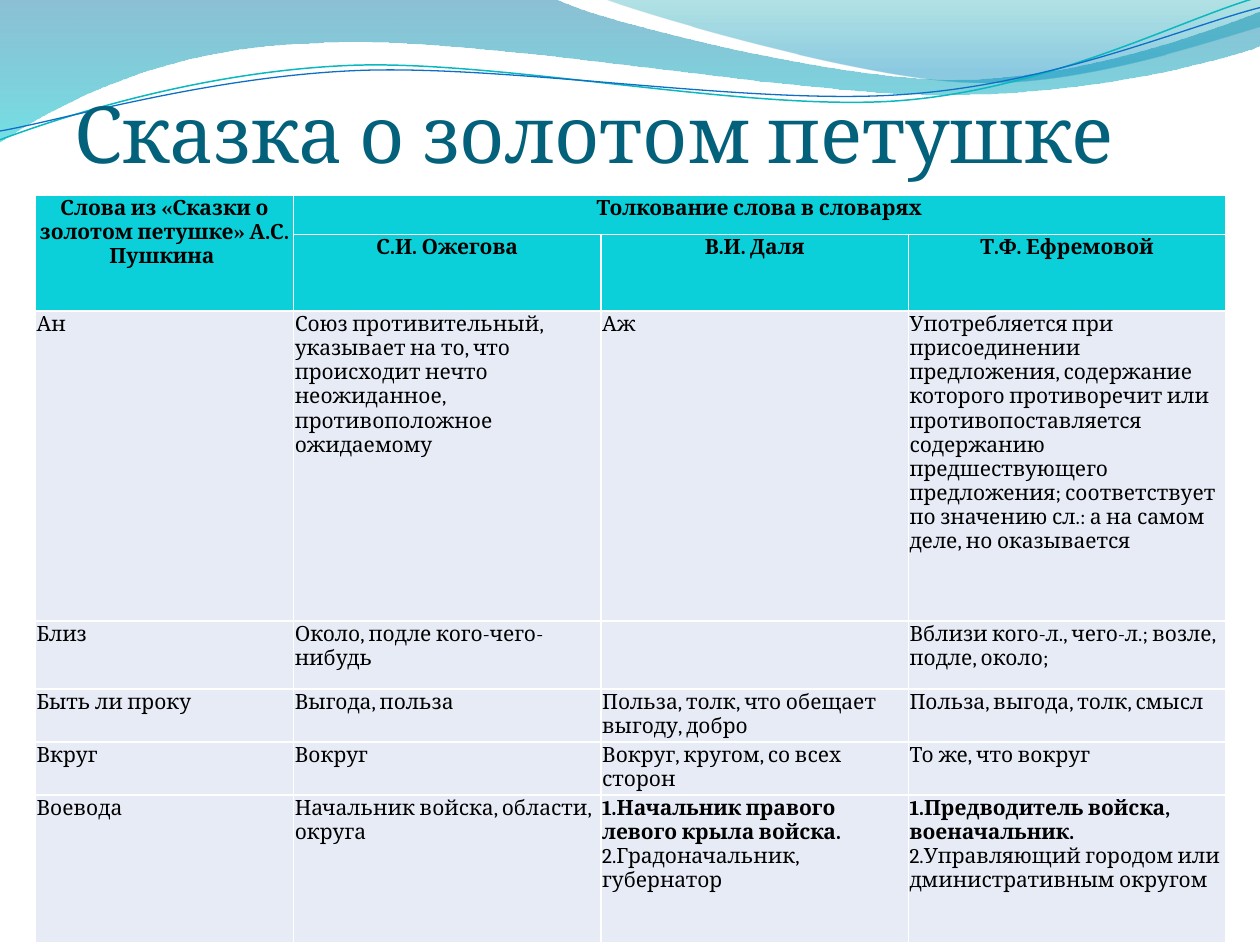
from math import cos, radians, sin

from lxml import etree
from pptx import Presentation
from pptx.dml.color import RGBColor
from pptx.enum.text import MSO_ANCHOR, PP_ALIGN
from pptx.oxml.ns import qn
from pptx.util import Inches, Pt

CENTER, LEFT = PP_ALIGN.CENTER, PP_ALIGN.LEFT
BOTTOM = MSO_ANCHOR.BOTTOM
FONT = "Cambria"
COLORS = {
    "title": "04617B", "text": "000000", "header": "0BD0D9", "body": "E7EBF5",
    "border": "FFFFFF", "teal": "0AB8BF", "blue": "0F6FC6",
}

TITLE = "Сказка о золотом петушке"
HEADERS = [
    ["Слова из «Сказки о золотом петушке» А.С. Пушкина ", "Толкование слова в словарях", "", ""],
    ["", "С.И. Ожегова", "В.И. Даля", "Т.Ф. Ефремовой"],
]
# A tuple holds a bold part followed by a regular part.
ENTRIES = [
    ["Ан",
     "Союз противительный, указывает на то, что происходит нечто неожиданное, "
     "противоположное ожидаемому",
     "Аж",
     "Употребляется при присоединении предложения, содержание которого противоречит или "
     "противопоставляется содержанию предшествующего предложения; соответствует по "
     "значению сл.: а на самом деле, но оказывается"],
    ["Близ", "Около, подле кого-чего-нибудь", "",
     "Вблизи кого-л., чего-л.; возле, подле, около;"],
    ["Быть ли проку", "Выгода, польза", "Польза, толк, что обещает выгоду, добро",
     "Польза, выгода, толк, смысл"],
    ["Вкруг", "Вокруг", "Вокруг, кругом, со всех сторон", "То же, что вокруг"],
    ["Воевода", "Начальник войска, области, округа",
     ("1.Начальник правого левого крыла войска. ", "2.Градоначальник, губернатор"),
     ("1.Предводитель войска, военачальник. ",
      "2.Управляющий городом или дминистративным округом")],
]
COLUMN_WIDTHS = [2.05, 2.44, 2.44, 2.52]
ROW_HEIGHTS = [0.31, 0.47, 2.46, 0.54, 0.42, 0.42, 1.17]

# Frame (left, top, width, height), then the outline in slide inches: a start point,
# lines (2 numbers) and Bezier curves (6 numbers).
# Gradient stops: position, colour, opacity in percent.
WAVES = [
    ((-0.01, -0.01, 10.02, 1.14),
     [(0, 0), (4.4, -0.01), (4.76, 0.17, 6.64, 0.63, 7.58, 0.63),
      (8.53, 0.63, 9.58, 0.26, 10, 0.09), (10.01, 0.36),
      (9.83, 0.44, 8.7, 0.76, 7.46, 0.75), (6.22, 0.75, 3.82, 0.28, 2.57, 0.34),
      (1.29, 0.36, 0.46, 0.83, -0.01, 1.13), (0, 0)],
     [(0, "0074A1", 45), (1, "00C6CF", 55)]),
    ((4.79, -0.01, 5.21, 0.7),
     [(4.79, -0.01), (5.09, 0.11, 6.82, 0.62, 7.69, 0.65),
      (8.56, 0.69, 9.61, 0.32, 10, 0.21), (10, 0), (4.79, -0.01)],
     [(0, "00A1A9", 30), (0.8, "008BBF", 45)]),
]
CURVES = [
    ((-0.02, 0.22, 10.02, 0.71),
     [(0, 1.11), (0.48, 0.93, 1.58, 0.57, 2.77, 0.52), (3.95, 0.47, 5.93, 0.89, 7.13, 0.8),
      (8.33, 0.71, 9.38, 0.15, 9.98, -0.02)], "teal", 0.85),
    ((-0.02, 0.3, 10.03, 0.58),
     [(0, 1.04), (0.47, 0.96, 1.64, 0.61, 2.83, 0.56), (4.03, 0.51, 5.97, 0.84, 7.17, 0.75),
      (8.36, 0.67, 9.41, 0.21, 10, 0.06)], "blue", 0.75),
]
CURVE_ROTATION = -2.7


def rgb(name):
    return RGBColor.from_string(COLORS[name])


def to_frame(x, y, frame, rotation):
    """Turn a slide point back by the rotation and measure it from the frame's corner."""
    left, top, width, height = frame
    dx, dy = x - left - width / 2, y - top - height / 2
    angle = radians(-rotation)
    return (width / 2 + dx * cos(angle) - dy * sin(angle),
            height / 2 + dx * sin(angle) + dy * cos(angle))


def add_outline(slide, frame, outline, rotation=0, close=False):
    """Add a freeform whose segments may be Bezier curves."""
    ends = [(Inches(segment[-2]), Inches(segment[-1])) for segment in outline]
    builder = slide.shapes.build_freeform(*ends[0])
    builder.add_line_segments(ends[1:], close=close)
    shape = builder.convert_to_shape()
    shape.shadow.inherit = False
    shape.left, shape.top, shape.width, shape.height = map(Inches, frame)
    shape.rotation = rotation

    route = shape.element.spPr.find(".//" + qn("a:path"))
    route.set("w", str(shape.width))
    route.set("h", str(shape.height))
    for old_segment, segment in zip(list(route), outline):
        tag = "a:cubicBezTo" if len(segment) == 6 else old_segment.tag
        new_segment = etree.Element(qn(tag) if tag.startswith("a:") else tag)
        for x, y in zip(segment[::2], segment[1::2]):
            local_x, local_y = to_frame(x, y, frame, rotation)
            etree.SubElement(new_segment, qn("a:pt"),
                             x=str(Inches(local_x)), y=str(Inches(local_y)))
        route.replace(old_segment, new_segment)
    return shape


def add_wave(slide, frame, outline, stops):
    shape = add_outline(slide, frame, outline, close=True)
    shape.line.fill.background()
    shape.fill.gradient()
    shape.fill.gradient_angle = 270
    for stop, (position, color, _) in zip(shape.fill.gradient_stops, stops):
        stop.position = position
        stop.color.rgb = RGBColor.from_string(color)
    stop_colors = shape.element.spPr.findall(".//" + qn("a:srgbClr"))
    for element, (_, _, opacity) in zip(stop_colors, stops):
        etree.SubElement(element, qn("a:alpha"), val=str(opacity * 1000))


def add_curve(slide, frame, outline, color, width):
    shape = add_outline(slide, frame, outline, rotation=CURVE_ROTATION)
    shape.fill.background()
    shape.line.color.rgb = rgb(color)
    shape.line.width = Pt(width)


def set_font(paragraph, size, color):
    paragraph.font.name = FONT
    paragraph.font.size = Pt(size)
    paragraph.font.color.rgb = rgb(color)


def add_title(slide):
    box = slide.shapes.add_textbox(Inches(0.59), Inches(0.92), Inches(9), Inches(1.25))
    frame = box.text_frame
    frame.word_wrap = True
    frame.vertical_anchor = BOTTOM
    frame.margin_left = frame.margin_right = 0
    frame.margin_bottom = Inches(0.75)
    paragraph = frame.paragraphs[0]
    paragraph.text = TITLE
    set_font(paragraph, 45, "title")


def add_borders(cell):
    properties = cell._tc.get_or_add_tcPr()
    for index, side in enumerate(("lnL", "lnR", "lnT", "lnB")):
        line = etree.Element(qn("a:" + side), w=str(Pt(1)))
        fill = etree.SubElement(line, qn("a:solidFill"))
        etree.SubElement(fill, qn("a:srgbClr"), val=COLORS["border"])
        properties.insert(index, line)


def fill_cell(cell, content, is_header):
    cell.margin_left = cell.margin_right = cell.margin_top = Inches(0.01)
    cell.margin_bottom = 0
    cell.fill.solid()
    cell.fill.fore_color.rgb = rgb("header" if is_header else "body")
    add_borders(cell)
    paragraph = cell.text_frame.paragraphs[0]
    paragraph.alignment = CENTER if is_header else LEFT
    set_font(paragraph, 12, "text")
    if isinstance(content, tuple):
        for text, bold in zip(content, (True, False)):
            run = paragraph.add_run()
            run.text = text
            run.font.bold = bold
    else:
        paragraph.font.bold = is_header
        if content:
            paragraph.text = content


def add_dictionary_table(slide):
    rows = HEADERS + ENTRIES
    table = slide.shapes.add_table(
        len(rows), len(COLUMN_WIDTHS), Inches(0.28), Inches(1.55),
        Inches(sum(COLUMN_WIDTHS)), Inches(sum(ROW_HEIGHTS))).table
    table.first_row = table.horz_banding = False
    for column, width in zip(table.columns, COLUMN_WIDTHS):
        column.width = Inches(width)
    for row, height in zip(table.rows, ROW_HEIGHTS):
        row.height = Inches(height)
    for row_index, row in enumerate(rows):
        for column_index, content in enumerate(row):
            fill_cell(table.cell(row_index, column_index), content, row_index < len(HEADERS))
    table.cell(0, 0).merge(table.cell(1, 0))
    table.cell(0, 1).merge(table.cell(0, 3))


presentation = Presentation()
presentation.slide_width, presentation.slide_height = Inches(10), Inches(7.5)
slide = presentation.slides.add_slide(presentation.slide_layouts[6])
for wave in WAVES:
    add_wave(slide, *wave)
for curve in CURVES:
    add_curve(slide, *curve)
add_title(slide)
add_dictionary_table(slide)
presentation.save("out.pptx")
